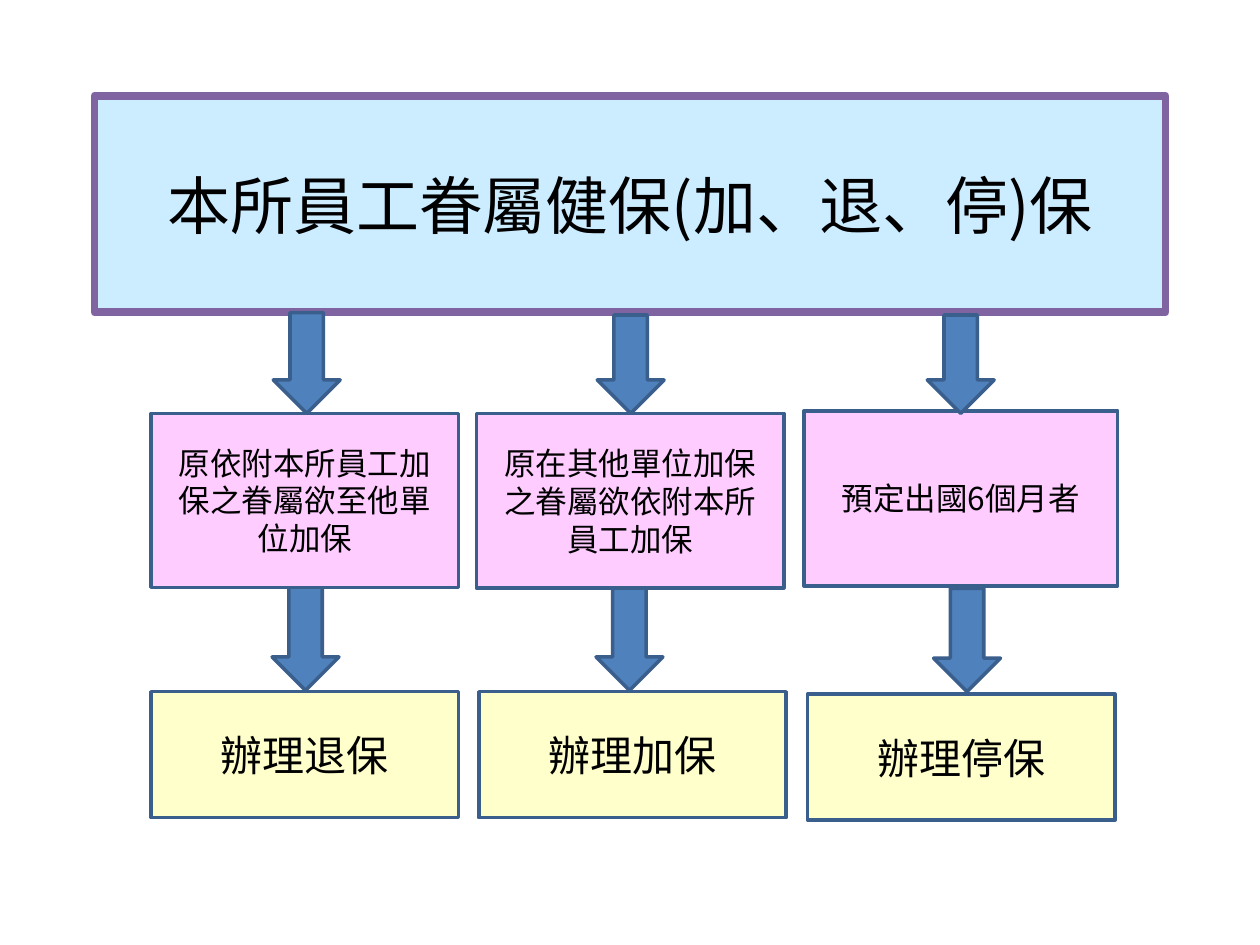
from lxml.etree import SubElement
from pptx import Presentation
from pptx.dml.color import RGBColor
from pptx.enum.shapes import MSO_SHAPE
from pptx.enum.text import MSO_ANCHOR, MSO_AUTO_SIZE, PP_ALIGN
from pptx.oxml.ns import qn
from pptx.util import Pt

THEME = {
    "font": "Noto Sans CJK SC",
    "text": "000000",
    "title_fill": "CCECFF",
    "title_line": "8064A2",
    "reason_fill": "FFCCFF",
    "action_fill": "FFFFCC",
    "arrow_fill": "4F81BD",
    "line": "3A5F8C",
    "title_size": 36,
    "reason_size": 18,
    "action_size": 24,
    "title_border": 4.5,
    "border": 2,
}


def style_shape(shape, bounds, fill, line="line", border="border"):
    shape.left, shape.top, shape.width, shape.height = [Pt(value) for value in bounds]
    shape.shadow.inherit = False
    shape.fill.solid()
    shape.fill.fore_color.rgb = RGBColor.from_string(THEME[fill])
    shape.line.color.rgb = RGBColor.from_string(THEME[line])
    shape.line.width = Pt(THEME[border])


def write_text(shape, text, size):
    frame = shape.text_frame
    frame.text = text
    frame.word_wrap = True
    frame.auto_size = MSO_AUTO_SIZE.NONE
    frame.vertical_anchor = MSO_ANCHOR.MIDDLE
    para = frame.paragraphs[0]
    para.alignment = PP_ALIGN.CENTER
    span = para.runs[0]
    span.font.size = Pt(THEME[size])
    span.font.name = THEME["font"]
    span.font.color.rgb = RGBColor.from_string(THEME["text"])
    SubElement(span.font._element, qn("a:ea"), typeface=THEME["font"])


deck = Presentation()
deck.slide_width, deck.slide_height = Pt(720), Pt(540)
page = deck.slides.add_slide(deck.slide_layouts[0])
shapes = page.shapes

title = shapes.title
title.left = Pt(54)
geometry = SubElement(title._element.spPr, qn("a:prstGeom"), prst="roundRect")
SubElement(geometry, qn("a:avLst"))
style_shape(title, (54, 54.7, 612, 123.8), "title_fill", "title_line", "title_border")
write_text(title, "本所員工眷屬健保(加、退、停)保", "title_size")

arrow_width = 38.2
arrows = [
    (156.2, 178.6, 57.6), (341.3, 180, 56.2), (529.9, 180, 56.2),
    (155.5, 335.5, 59), (340.6, 335.5, 59), (533.5, 336.2, 59),
]
for left, top, height in arrows:
    arrow = shapes.add_shape(MSO_SHAPE.DOWN_ARROW, 0, 0, 0, 0)
    style_shape(arrow, (left, top, arrow_width, height), "arrow_fill")

reasons = [
    ("原依附本所員工加保之眷屬欲至他單位加保", (86.4, 236.2, 175.7, 99.4)),
    ("原在其他單位加保之眷屬欲依附本所員工加保", (272.2, 236.2, 175.7, 99.7)),
    ("預定出國6個月者", (459.4, 234.7, 179.3, 100.1)),
]
for index, (text, bounds) in enumerate(reasons):
    if index == 2:
        box = page.placeholders[1]
    else:
        box = shapes.add_shape(MSO_SHAPE.FLOWCHART_PROCESS, 0, 0, 0, 0)
    style_shape(box, bounds, "reason_fill")
    write_text(box, text, "reason_size")

actions = [("辦理退保", 86.4, 395.3), ("辦理加保", 273.6, 395.3), ("辦理停保", 461.5, 396.7)]
for text, left, top in actions:
    box = shapes.add_shape(MSO_SHAPE.RECTANGLE, 0, 0, 0, 0)
    style_shape(box, (left, top, 175.7, 72), "action_fill")
    write_text(box, text, "action_size")

deck.save("out.pptx")
